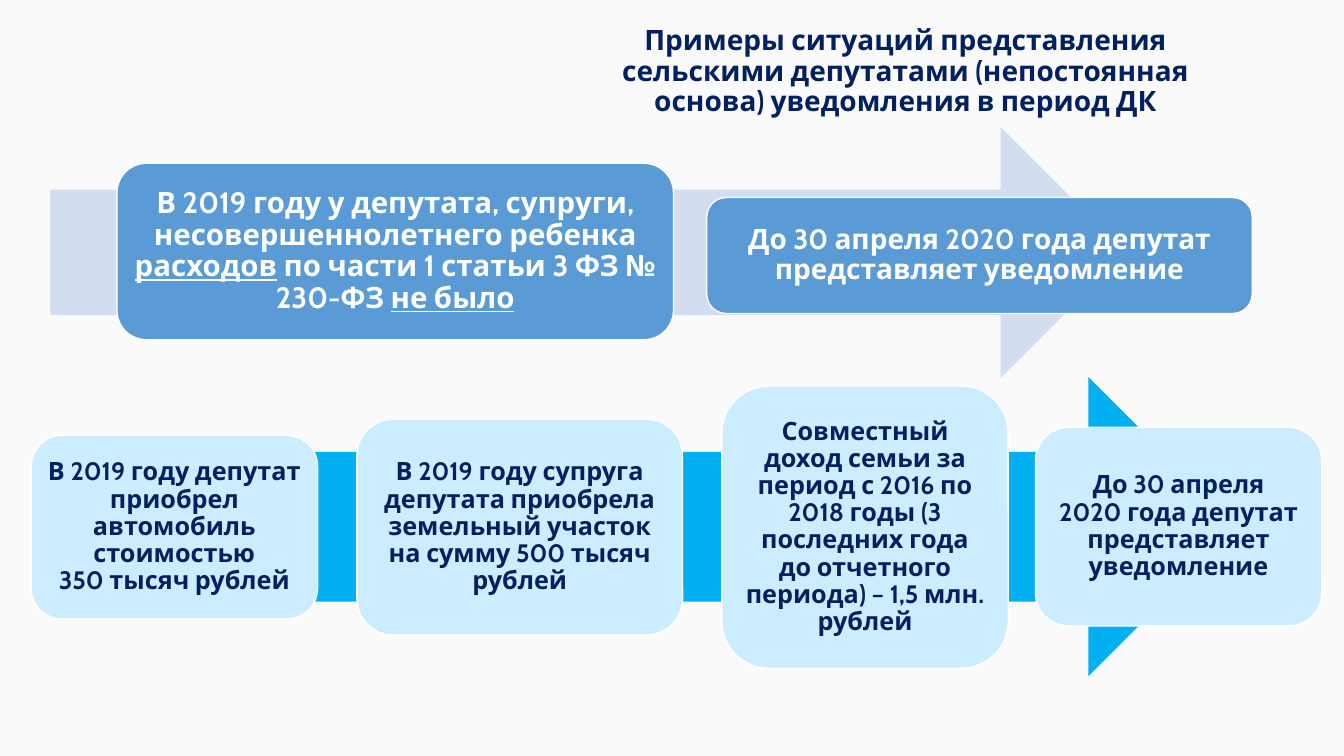
from pptx import Presentation
from pptx.dml.color import RGBColor
from pptx.enum.shapes import MSO_SHAPE
from pptx.enum.text import MSO_ANCHOR, MSO_AUTO_SIZE, PP_ALIGN
from pptx.util import Inches, Pt

ARROW = MSO_SHAPE.RIGHT_ARROW
ROUNDED = MSO_SHAPE.ROUNDED_RECTANGLE
MIDDLE = MSO_ANCHOR.MIDDLE
CENTER = PP_ALIGN.CENTER
NO_AUTOFIT = MSO_AUTO_SIZE.NONE

FONT = "Cabin"
TITLE_ONLY_LAYOUT = 5
COLORS = {
    "background": "FAFAFA",
    "navy": "002060",
    "white": "FFFFFF",
    "pale_arrow": "D2DEEF",
    "blue_card": "5B9BD5",
    "bright_arrow": "00B0F0",
    "light_card": "CCECFF",
}

TITLE = ("Примеры ситуаций представления сельскими депутатами "
         "(непостоянная основа) уведомления в период ДК")

# Each card: left, top, width, height, inset, font size, text.
# Underscores enclose underlined words.
NO_EXPENSES_CARDS = [
    (1.16, 1.62, 5.52, 1.75, 0.09, 21,
     "В 2019 году у депутата, супруги, несовершеннолетнего ребенка "
     "_расходов_ по части 1 статьи 3 ФЗ № 230-ФЗ _не было_"),
    (7.01, 1.96, 5.41, 1.15, 0.08, 20,
     "До 30 апреля 2020 года депутат представляет уведомление"),
]
EXPENSES_CARDS = [
    (0.31, 4.32, 2.84, 1.82, 0.07, 18,
     "В 2019 году депутат приобрел автомобиль стоимостью\n350 тысяч рублей"),
    (3.54, 4.16, 3.23, 2.14, 0.07, 18,
     "В 2019 году супруга депутата приобрела земельный участок "
     "на сумму 500 тысяч рублей"),
    (7.16, 3.83, 2.84, 2.8, 0.07, 18,
     "Совместный доход семьи за период с 2016 по 2018 годы (3 последних "
     "года до отчетного периода) – 1,5 млн. рублей"),
    (10.27, 4.24, 2.84, 1.97, 0.07, 18,
     "До 30 апреля\n2020 года депутат представляет уведомление"),
]


def rgb(name):
    return RGBColor.from_string(COLORS[name])


def format_paragraph(paragraph, size, color):
    paragraph.alignment = CENTER
    paragraph.line_spacing = 0.9
    font = paragraph.font
    font.name = FONT
    font.size = Pt(size)
    font.bold = True
    font.color.rgb = rgb(color)


def write_text(paragraph, text):
    for line_index, line in enumerate(text.split("\n")):
        if line_index:
            paragraph.add_line_break()
        for part_index, part in enumerate(line.split("_")):
            if part:
                run = paragraph.add_run()
                run.text = part
                if part_index % 2:
                    run.font.underline = True


def add_filled_shape(slide, kind, left, top, width, height, fill):
    shape = slide.shapes.add_shape(
        kind, Inches(left), Inches(top), Inches(width), Inches(height))
    shape.shadow.inherit = False
    shape.fill.solid()
    shape.fill.fore_color.rgb = rgb(fill)
    return shape


def add_arrow(slide, left, top, width, height, fill):
    arrow = add_filled_shape(slide, ARROW, left, top, width, height, fill)
    arrow.line.fill.background()


def add_card(slide, left, top, width, height, inset, size, text, fill, color):
    card = add_filled_shape(slide, ROUNDED, left, top, width, height, fill)
    card.line.color.rgb = rgb("white")
    card.line.width = Pt(1)
    frame = card.text_frame
    frame.word_wrap = True
    frame.vertical_anchor = MIDDLE
    frame.margin_left = frame.margin_right = Inches(inset)
    frame.margin_top = frame.margin_bottom = Inches(inset)
    paragraph = frame.paragraphs[0]
    write_text(paragraph, text)
    format_paragraph(paragraph, size, color)


def add_title(slide):
    title = slide.shapes.title
    title.left, title.top = Inches(5.54), Inches(0.18)
    title.width, title.height = Inches(6.88), Inches(1.07)
    frame = title.text_frame
    frame.word_wrap = True
    frame.auto_size = NO_AUTOFIT
    frame.vertical_anchor = MIDDLE
    frame.text = TITLE
    format_paragraph(frame.paragraphs[0], 20, "navy")


def main():
    presentation = Presentation()
    presentation.slide_width = Inches(13.33)
    presentation.slide_height = Inches(7.5)
    slide = presentation.slides.add_slide(
        presentation.slide_layouts[TITLE_ONLY_LAYOUT])
    slide.background.fill.solid()
    slide.background.fill.fore_color.rgb = rgb("background")
    add_title(slide)

    # Upper process: no expenses
    add_arrow(slide, 0.5, 1.26, 10.67, 2.49, "pale_arrow")
    for card in NO_EXPENSES_CARDS:
        add_card(slide, *card, "blue_card", "white")

    # Lower process: purchases compared with family income
    add_arrow(slide, 1.28, 3.74, 11, 2.97, "bright_arrow")
    for card in EXPENSES_CARDS:
        add_card(slide, *card, "light_card", "navy")

    presentation.save("out.pptx")


if __name__ == "__main__":
    main()
